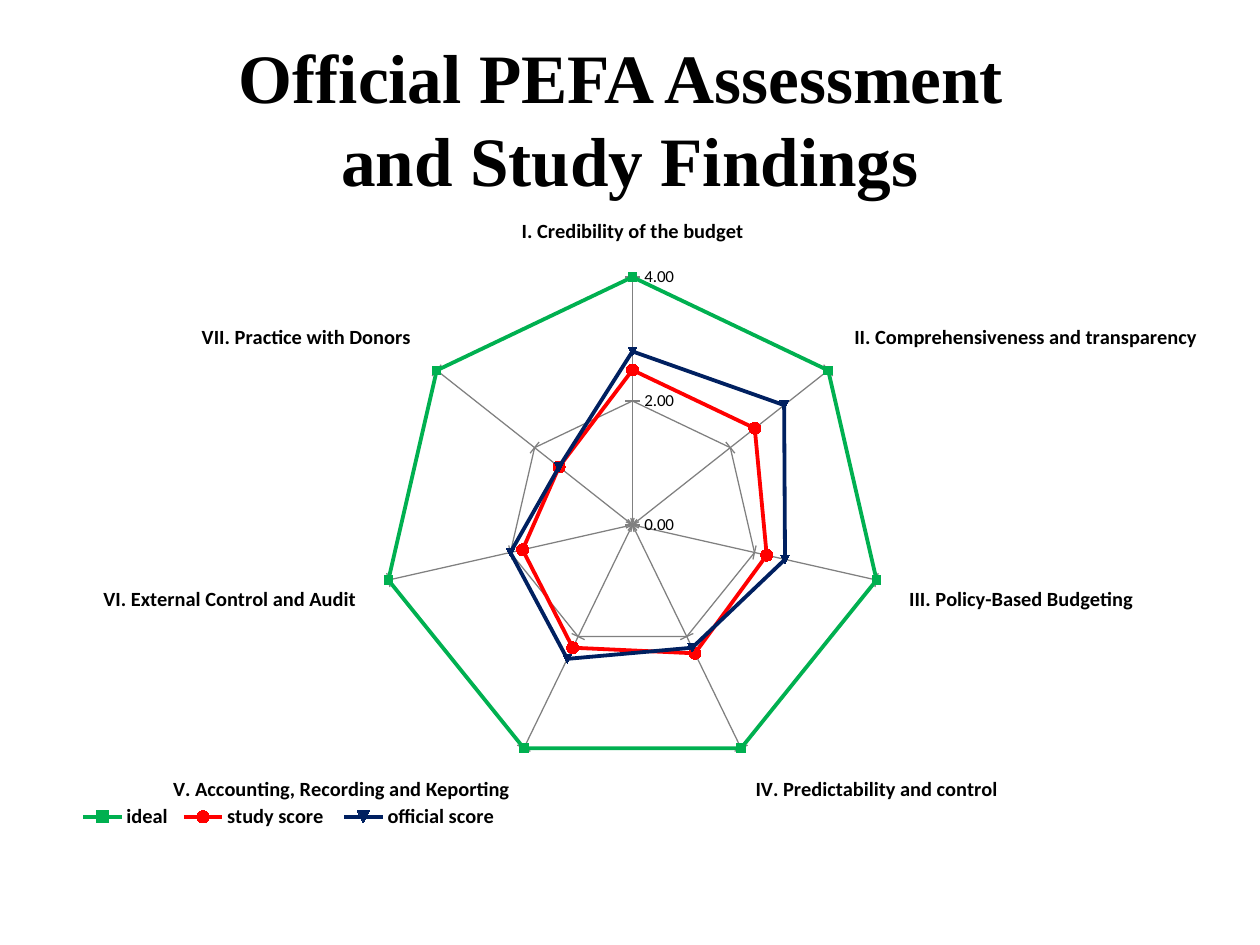
import lxml.etree
import pptx
import pptx.chart.data
import pptx.dml.color
import pptx.enum.chart
import pptx.enum.text
import pptx.oxml.ns
import pptx.util

EMU_PER_PX = 914400 // 126
BLACK = pptx.dml.color.RGBColor(0x00, 0x00, 0x00)
GRAY = pptx.dml.color.RGBColor(0x80, 0x80, 0x80)
GREEN = pptx.dml.color.RGBColor(0x00, 0xB0, 0x50)
RED = pptx.dml.color.RGBColor(0xFF, 0x00, 0x00)
NAVY = pptx.dml.color.RGBColor(0x00, 0x20, 0x60)

MARKER = pptx.enum.chart.XL_MARKER_STYLE
TICK = pptx.enum.chart.XL_TICK_MARK

CATEGORIES = [
    "I. Credibility of the budget",
    "II. Comprehensiveness and transparency",
    "III. Policy-Based Budgeting",
    "IV. Predictability and control ",
    "V. Accounting, Recording and Кeporting",
    "VI. External Control and Audit",
    "VII. Practice with Donors",
]
SCORES = [
    ("ideal", [4] * 7, GREEN, MARKER.AUTOMATIC, 5),
    ("study score ", [2.5, 2.5, 2.2, 2.3, 2.2, 1.8, 1.5], RED, MARKER.CIRCLE, 7),
    ("official score", [2.8, 3.1, 2.5, 2.2, 2.4, 2, 1.5], NAVY, MARKER.AUTOMATIC, 5),
]


def px(length):
    return pptx.util.Emu(length * EMU_PER_PX)


def manual_layout(fractions, inner=False):
    qn = pptx.oxml.ns.qn
    layout = lxml.etree.Element(qn("c:layout"))
    manual = lxml.etree.SubElement(layout, qn("c:manualLayout"))
    settings = [("layoutTarget", "inner")] if inner else []
    settings += [("xMode", "edge"), ("yMode", "edge")]
    settings += zip("xywh", fractions)
    for name, value in settings:
        lxml.etree.SubElement(manual, qn("c:" + name)).set("val", str(value))
    return layout


class SlideBuilder:
    title_font = "Times New Roman"
    chart_font = "Calibri"

    def __init__(self, presentation):
        self.slide = presentation.slides.add_slide(presentation.slide_layouts[6])

    def style_font(self, font, name, size, bold=False):
        font.name = name
        font.size = pptx.util.Pt(size)
        font.bold = bold
        font.color.rgb = BLACK

    def style_line(self, line, color, width):
        line.color.rgb = color
        line.width = pptx.util.Pt(width)

    def title(self, lines, left, top, width, height):
        shape = self.slide.shapes.add_textbox(px(left), px(top), px(width), px(height))
        frame = shape.text_frame
        frame.word_wrap = True
        frame.vertical_anchor = pptx.enum.text.MSO_ANCHOR.MIDDLE
        paragraph = frame.paragraphs[0]
        paragraph.alignment = pptx.enum.text.PP_ALIGN.CENTER
        paragraph.line_spacing = pptx.util.Pt(47.4)
        for index, text in enumerate(lines):
            if index:
                paragraph.add_line_break()
            run = paragraph.add_run()
            run.text = text
            self.style_font(run.font, self.title_font, 39.6, True)

    def radar(self, categories, scores, left, top, width, height):
        data = pptx.chart.data.CategoryChartData(number_format="0.00")
        data.categories = categories
        for name, values, *_ in scores:
            data.add_series(name, values)
        chart = self.slide.shapes.add_chart(
            pptx.enum.chart.XL_CHART_TYPE.RADAR_MARKERS,
            px(left), px(top), px(width), px(height), data,
        ).chart
        chart.has_title = False
        self.style_font(chart.font, self.chart_font, 10)
        self.style_axes(chart)
        self.style_series(chart.plots[0], scores)
        self.place_plot(chart, [0.29, 0.054, 0.455, 0.828])
        self.add_legend(chart, [0.01, 0.93, 0.39, 0.05])

    def style_axes(self, chart):
        category_axis, value_axis = chart.category_axis, chart.value_axis
        self.style_font(category_axis.tick_labels.font, self.chart_font, 12, True)
        self.style_font(value_axis.tick_labels.font, self.chart_font, 10)
        category_axis.major_tick_mark = TICK.OUTSIDE
        value_axis.major_tick_mark = TICK.CROSS
        value_axis.minimum_scale = 0
        value_axis.maximum_scale = 4
        value_axis.major_unit = 2
        value_axis.tick_labels.number_format = "0.00"
        value_axis.tick_labels.number_format_is_linked = False
        for axis in (category_axis, value_axis):
            axis.has_major_gridlines = True
            self.style_line(axis.major_gridlines.format.line, GRAY, 0.75)
            self.style_line(axis.format.line, GRAY, 0.75)

    def style_series(self, plot, scores):
        plot.vary_by_categories = False
        for series, (_, _, color, marker_style, marker_size) in zip(plot.series, scores):
            self.style_line(series.format.line, color, 2.25)
            marker = series.marker
            marker.style = marker_style
            marker.size = marker_size
            marker.format.fill.solid()
            marker.format.fill.fore_color.rgb = color
            self.style_line(marker.format.line, color, 0.75)

    def place_plot(self, chart, fractions):
        plot_area = chart.element.find(".//" + pptx.oxml.ns.qn("c:plotArea"))
        self.drop_layout(plot_area)
        plot_area.insert(0, manual_layout(fractions, inner=True))

    def add_legend(self, chart, fractions):
        chart.has_legend = True
        legend = chart.legend
        legend.position = pptx.enum.chart.XL_LEGEND_POSITION.BOTTOM
        legend.include_in_layout = False
        self.style_font(legend.font, self.chart_font, 12, True)
        element = chart.element.find(".//" + pptx.oxml.ns.qn("c:legend"))
        self.drop_layout(element)
        position = element.find(pptx.oxml.ns.qn("c:legendPos"))
        position.addnext(manual_layout(fractions))

    def drop_layout(self, element):
        for layout in element.findall(pptx.oxml.ns.qn("c:layout")):
            element.remove(layout)


def main():
    presentation = pptx.Presentation()
    presentation.slide_width = pptx.util.Inches(10)
    presentation.slide_height = pptx.util.Inches(7.5)
    builder = SlideBuilder(presentation)
    builder.title(["Official PEFA Assessment ", "and Study Findings"], 63, 38, 1134, 158)
    builder.radar(CATEGORIES, SCORES, 63, 220, 1134, 624)
    presentation.save("out.pptx")


if __name__ == "__main__":
    main()
